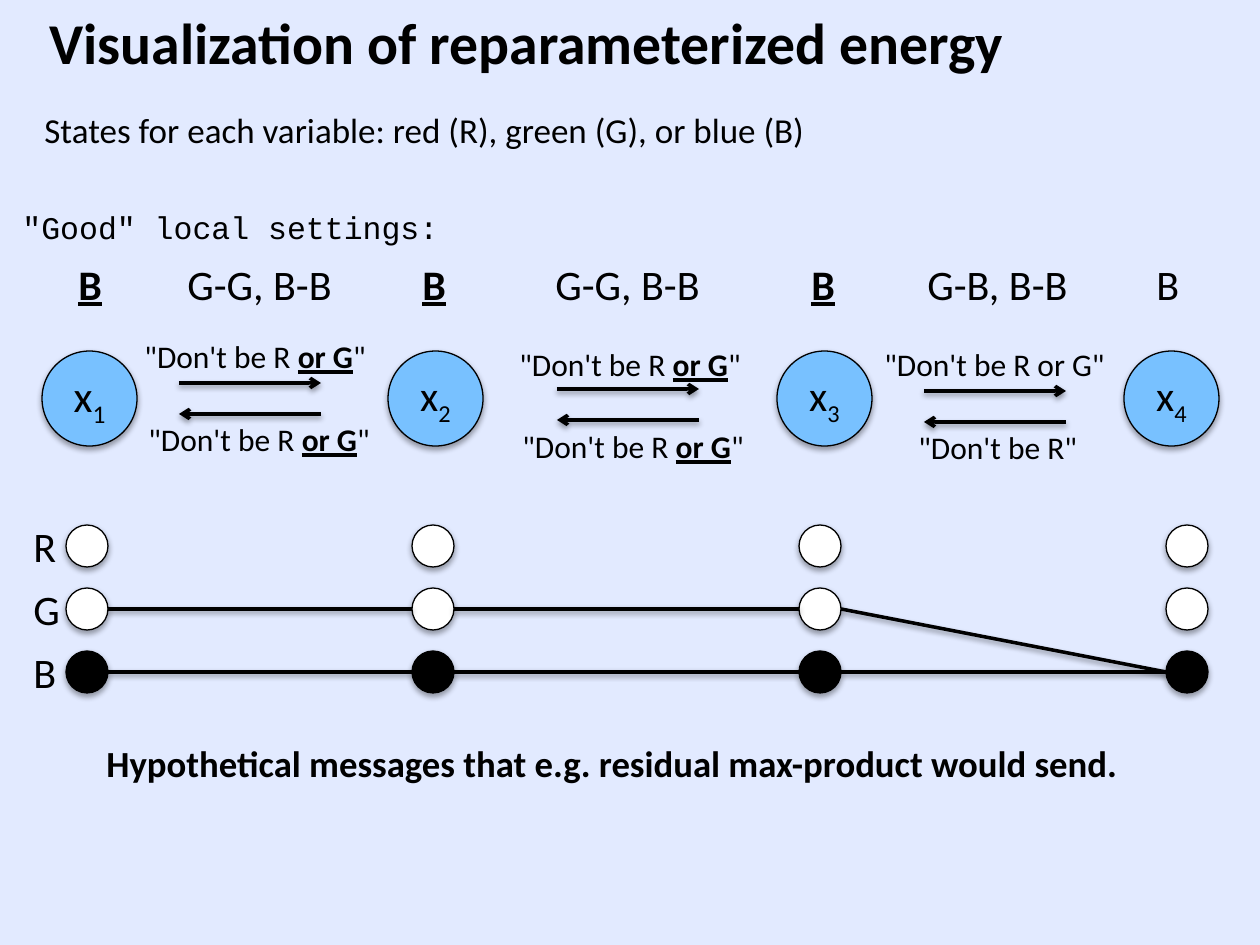
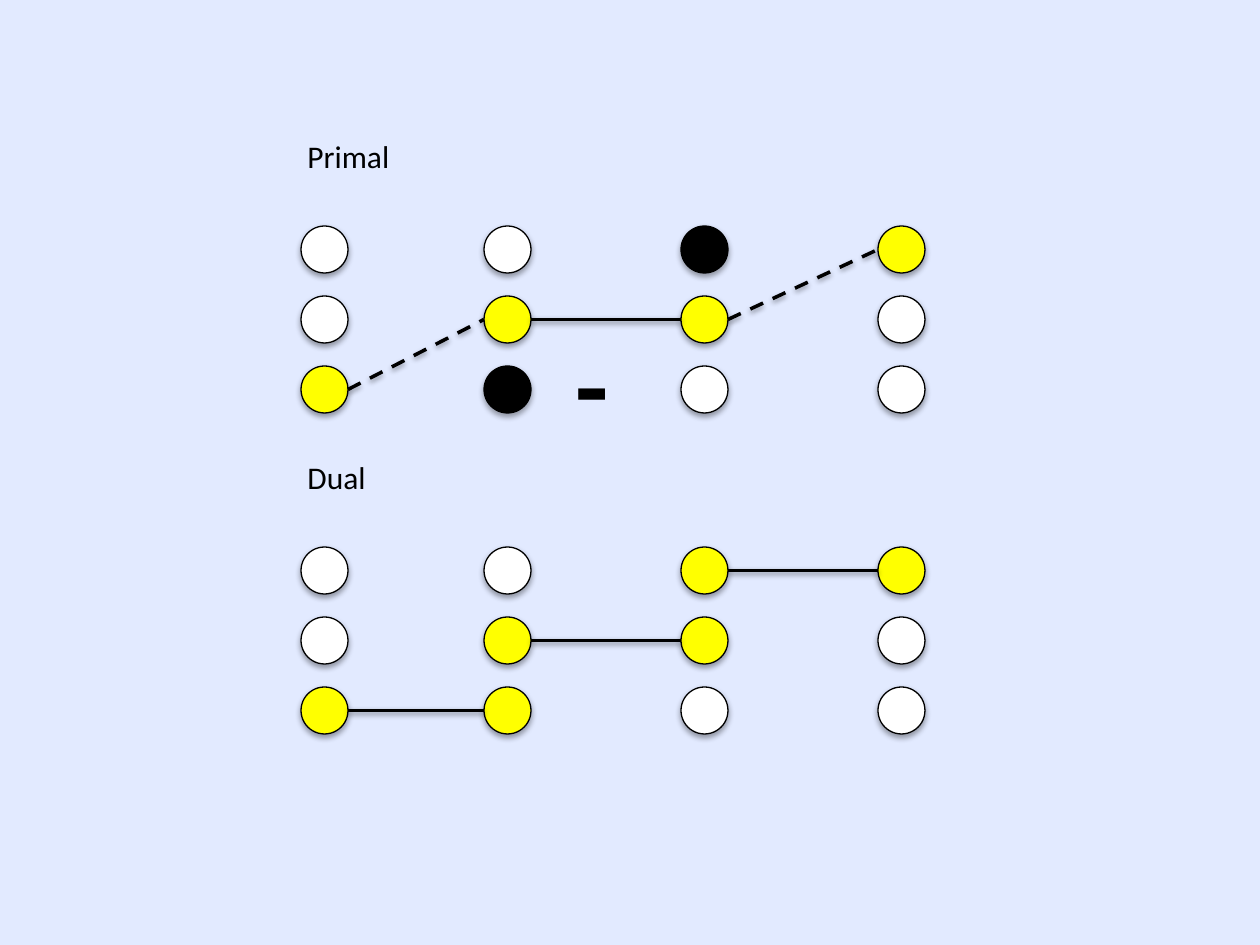
from lxml import etree
from pptx import Presentation
from pptx.dml.color import RGBColor
from pptx.enum.dml import MSO_LINE
from pptx.enum.shapes import MSO_CONNECTOR, MSO_SHAPE
from pptx.enum.text import MSO_ANCHOR, MSO_AUTO_SIZE, PP_ALIGN
from pptx.oxml.ns import qn
from pptx.util import Pt

EMU_PER_PX = 914400 / 126
ELLIPSE = MSO_SHAPE.OVAL
STRAIGHT = MSO_CONNECTOR.STRAIGHT
DASH = MSO_LINE.DASH
TOP, MIDDLE = MSO_ANCHOR.TOP, MSO_ANCHOR.MIDDLE
LEFT, CENTER = PP_ALIGN.LEFT, PP_ALIGN.CENTER
GROW = MSO_AUTO_SIZE.SHAPE_TO_FIT_TEXT
TITLE_ONLY, BLANK = 5, 6

BACKGROUND = "E2EAFF"
INK = "000000"
VARIABLE_FILL = "78C1FF"
STATE_FILLS = {"W": "FFFFFF", "K": "000000", "Y": "FFFF00"}
BODY_FONT, CODE_FONT = "Calibri", "Courier New"


def px(length):
    return round(length * EMU_PER_PX)


def color(value):
    return RGBColor.from_string(value)


# Shared pieces
def add_shadow(shape, alpha, distance):
    effects = etree.SubElement(shape._element.spPr, qn("a:effectLst"))
    shadow = etree.SubElement(effects, qn("a:outerShdw"), blurRad="40000",
                              dist=str(distance), dir="5400000", rotWithShape="0")
    tint = etree.SubElement(shadow, qn("a:srgbClr"), val=INK)
    etree.SubElement(tint, qn("a:alpha"), val=str(alpha * 1000))


def add_circle(shapes, left, top, size, fill):
    circle = shapes.add_shape(ELLIPSE, px(left), px(top), px(size), px(size))
    circle.fill.solid()
    circle.fill.fore_color.rgb = color(fill)
    circle.line.color.rgb = color(INK)
    circle.line.width = Pt(0.75)
    add_shadow(circle, 35, 23000)
    return circle


def add_line(shapes, start, end, arrow=None, dashed=False):
    line = shapes.add_connector(STRAIGHT, *map(px, start + end))
    line.line.color.rgb = color(INK)
    line.line.width = Pt(2)
    if dashed:
        line.line.dash_style = DASH
    if arrow:
        etree.SubElement(line.line._get_or_add_ln(), qn(f"a:{arrow}"), type="arrow")
    add_shadow(line, 38, 20000)


def style_font(para, size, bold=False, font=BODY_FONT):
    para.font.size = Pt(size)
    para.font.name = font
    para.font.bold = bold
    para.font.color.rgb = color(INK)


def add_label(shapes, box, text, size, bold=False, font=BODY_FONT):
    """Text between asterisks is bold and underlined."""
    label = shapes.add_textbox(*map(px, box))
    frame = label.text_frame
    frame.word_wrap = False
    frame.auto_size = GROW
    para = frame.paragraphs[0]
    style_font(para, size, bold, font)
    for index, part in enumerate(text.split("*")):
        if part:
            span = para.add_run()
            span.text = part
            if index % 2:
                span.font.bold = span.font.underline = True


def add_page(deck, layout):
    page = deck.slides.add_slide(deck.slide_layouts[layout])
    page.background.fill.solid()
    page.background.fill.fore_color.rgb = color(BACKGROUND)
    return page


def add_lattice(shapes, left, top, size, pitch, offsets, columns, links):
    """Columns list the state colours downwards; links join (column, row) pairs."""
    for offset, states in zip(offsets, columns):
        for row, state in enumerate(states):
            add_circle(shapes, left + offset, top + row * pitch, size, STATE_FILLS[state])
    for column, start_row, end_row, dashed in links:
        start = (left + offsets[column] + size, top + start_row * pitch + size / 2)
        end = (left + offsets[column + 1], top + end_row * pitch + size / 2)
        add_line(shapes, start, end, dashed=dashed)


# Slide 1
def add_title(page, box, text):
    title = page.shapes.title
    title.left, title.top, title.width, title.height = map(px, box)
    frame = title.text_frame
    frame.text = text
    frame.word_wrap = False
    frame.vertical_anchor = TOP
    frame.paragraphs[0].alignment = LEFT
    style_font(frame.paragraphs[0], 33, bold=True)


def add_variable(shapes, left, top, index):
    circle = add_circle(shapes, left, top, 95, VARIABLE_FILL)
    frame = circle.text_frame
    frame.vertical_anchor = MIDDLE
    para = frame.paragraphs[0]
    para.alignment = CENTER
    style_font(para, 25 if index == 1 else 24)
    para.add_run().text = "x"
    subscript = para.add_run()
    subscript.text = str(index)
    subscript.font._element.set("baseline", "-25000")


def add_messages(shapes, left, top, forward, backward):
    """Arrow pair at (left, top); each message is (dx, dy, width, text)."""
    for offset, arrow in ((0, "tailEnd"), (31, "headEnd")):
        add_line(shapes, (left, top + offset), (left + 142, top + offset), arrow=arrow)
    for dx, dy, width, text in (forward, backward):
        add_label(shapes, (left + dx, top + dy, width, 50), text, 18)


def build_energy_page(deck):
    page = add_page(deck, TITLE_ONLY)
    shapes = page.shapes
    add_title(page, (37, 0, 990, 83), "Visualization of reparameterized energy")
    add_label(shapes, (32, 102, 791, 55),
              "States for each variable: red (R), green (G), or blue (B)", 20)
    add_label(shapes, (10, 202, 445, 50), '"Good" local settings:', 18, font=CODE_FONT)

    # Good settings above the chain
    settings = [(66, 49, "*B*"), (175, 171, "G-G, B-B"), (410, 49, "*B*"),
                (543, 171, "G-G, B-B"), (799, 49, "*B*"), (915, 168, "G-B, B-B"),
                (1144, 49, "B")]
    for left, width, text in settings:
        add_label(shapes, (left, 252, width, 63), text, 24)

    # Chain of variables and messages
    for index, left in enumerate((42, 388, 777, 1124), start=1):
        add_variable(shapes, left, 351, index)
    not_red_green = '"Don\'t be R *or G*"'
    add_messages(shapes, 179, 383, (-47, -52, 248, not_red_green),
                 (-43, 31, 249, not_red_green))
    add_messages(shapes, 557, 389, (-50, -50, 249, not_red_green),
                 (-47, 32, 249, not_red_green))
    add_messages(shapes, 924, 391, (-52, -52, 248, '"Don\'t be R or G"'),
                 (-18, 31, 186, '"Don\'t be R"'))

    # State lattice
    for row, (state, width) in enumerate((("R", 48), ("G", 52), ("B", 49))):
        add_label(shapes, (21, 514 + row * 63, width, 63), state, 24)
    links = [(column, row, row, False) for column in (0, 1) for row in (1, 2)]
    links += [(2, 2, 2, False), (2, 1, 2, False)]
    add_lattice(shapes, 66, 525, 42, 63, (0, 346, 733, 1100), ["WWK"] * 4, links)
    add_label(shapes, (94, 735, 1038, 57),
              "Hypothetical messages that e.g. residual max-product would send.", 21, bold=True)


# Slide 2
def add_diagram(page, left, top, name, name_width, columns, links):
    group = page.shapes.add_group_shape().shapes
    add_lattice(group, left, top, 47, 70, (0, 183, 380, 577), columns, links)
    add_label(group, (left - 6, top - 95, name_width, 96), name, 18)
    return group


def build_primal_dual_page(deck):
    page = add_page(deck, BLANK)
    primal = add_diagram(page, 301, 226, "Primal", 203, ("WWY", "WYK", "KYW", "YWW"),
                         [(0, 2, 1, True), (1, 1, 1, False), (2, 1, 0, True)])
    add_label(primal, (563, 311, 111, 271), "-", 62, bold=True)
    add_diagram(page, 301, 547, "Dual", 158, ("WWY", "WYY", "YYW", "YWW"),
                [(0, 2, 2, False), (1, 1, 1, False), (2, 0, 0, False)])


def main():
    deck = Presentation()
    deck.slide_width, deck.slide_height = px(1260), px(945)
    build_energy_page(deck)
    build_primal_dual_page(deck)
    deck.save("out.pptx")


if __name__ == "__main__":
    main()
